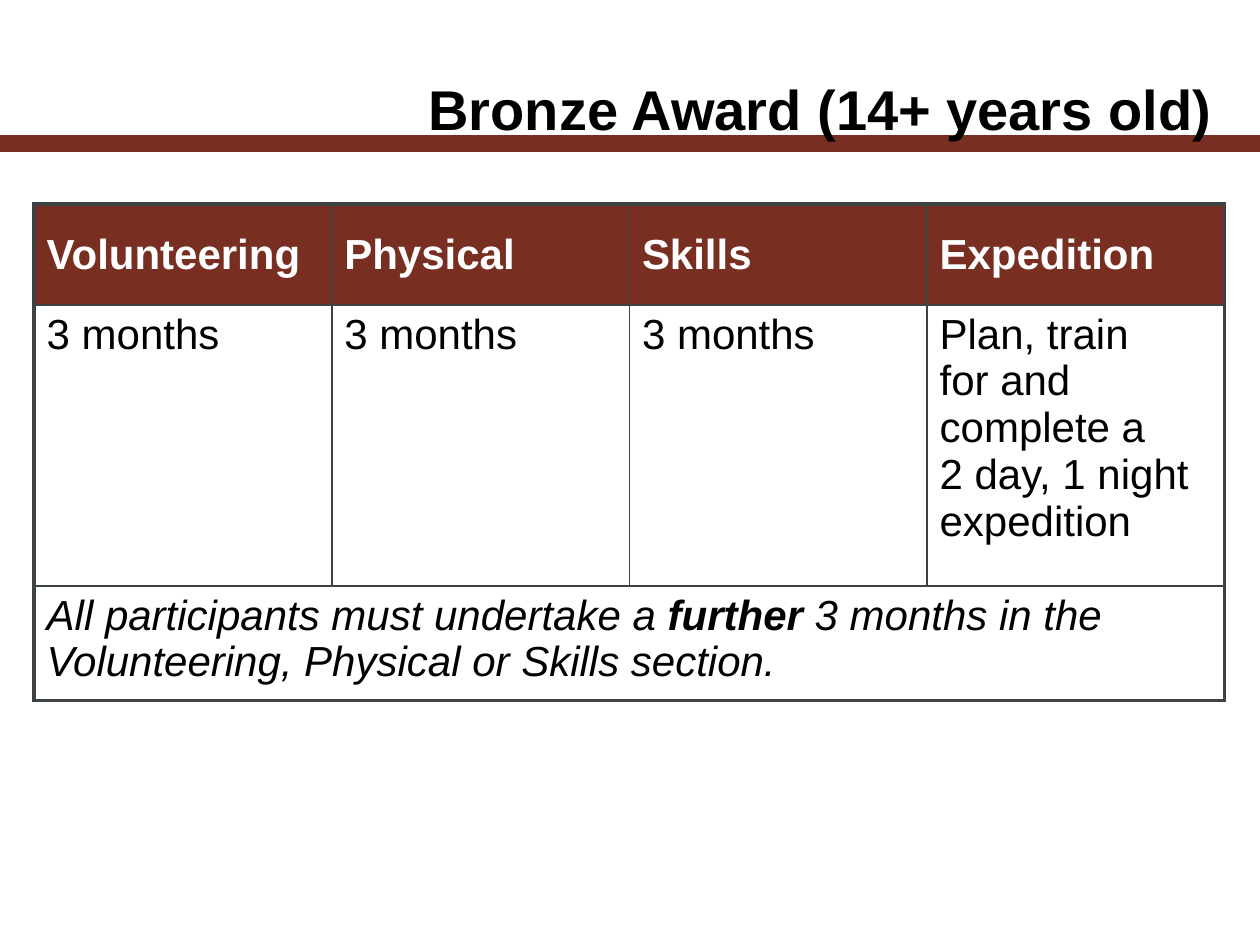
from dataclasses import dataclass
from typing import Any

import pptx
import pptx.dml.color
import pptx.enum.shapes
import pptx.enum.text
import pptx.oxml
import pptx.oxml.ns
import pptx.util

Pt = pptx.util.Pt
RGBColor = pptx.dml.color.RGBColor
MSO_ANCHOR = pptx.enum.text.MSO_ANCHOR
PP_ALIGN = pptx.enum.text.PP_ALIGN

RUST = RGBColor(0x78, 0x2F, 0x21)
GREY = RGBColor(0x3D, 0x42, 0x42)
BLACK = RGBColor(0, 0, 0)
WHITE = RGBColor(255, 255, 255)

FONT = "Arial"
COLUMN_WIDTH = 170.1
OUTER = 2.25
INNER = 1


@dataclass(frozen=True)
class Row:
    height: float
    texts: tuple[str, ...]
    fill: RGBColor = WHITE
    color: RGBColor = BLACK
    bold: bool = False
    italic: bool = False
    anchor: Any = MSO_ANCHOR.TOP


ROWS = (
    Row(57.6, ("Volunteering", "Physical", "Skills", "Expedition"),
        fill=RUST, color=WHITE, bold=True, anchor=MSO_ANCHOR.MIDDLE),
    Row(160.6, ("3 months", "3 months", "3 months",
                "Plan, train \nfor and complete a \n2 day, 1 night expedition")),
    Row(65.5, ("All participants must undertake a **further **"
               "3 months in the Volunteering, Physical or Skills section.",),
        italic=True),
)


def write_text(tf: Any, text: str, *, size: float = 24, color: RGBColor = BLACK,
               bold: bool = False, italic: bool = False,
               align: Any = PP_ALIGN.LEFT) -> None:
    p = tf.paragraphs[0]
    p.alignment = align
    p.space_before = Pt(0)
    for i, part in enumerate(text.split("**")):
        for j, line in enumerate(part.split("\n")):
            if j:
                p.add_line_break()
            r = p.add_run()
            r.text = line
            r.font.name = FONT
            r.font.size = Pt(size)
            r.font.color.rgb = color
            r.font.bold = bold or i % 2 == 1
            r.font.italic = italic


def set_border(cell: Any, side: str, width: float) -> None:
    tcPr = cell._tc.get_or_add_tcPr()
    tcPr.append(pptx.oxml.parse_xml(
        f'<a:ln{side} {pptx.oxml.ns.nsdecls("a")} w="{Pt(width)}">'
        f'<a:solidFill><a:srgbClr val="{GREY}"/></a:solidFill></a:ln{side}>'))


def format_cell(cell: Any, row: Row, i: int, j: int, columns: int) -> None:
    last = j == columns - 1
    merged = cell.is_merge_origin or cell.is_spanned
    if j == 0 or not merged:
        set_border(cell, "L", OUTER if j == 0 else INNER)
    if last or cell.is_merge_origin or not merged:
        set_border(cell, "R", OUTER if last or cell.is_merge_origin else INNER)
    set_border(cell, "T", OUTER if i == 0 else INNER)
    set_border(cell, "B", OUTER if i == len(ROWS) - 1 else INNER)
    cell.fill.solid()
    cell.fill.fore_color.rgb = row.fill
    cell.vertical_anchor = row.anchor


def add_award_table(s: Any, left: float, top: float) -> None:
    columns = len(ROWS[0].texts)
    height = sum(row.height for row in ROWS)
    table = s.shapes.add_table(len(ROWS), columns, Pt(left), Pt(top),
                               Pt(COLUMN_WIDTH * columns), Pt(height)).table
    table.first_row = False
    table.horz_banding = False
    for column in table.columns:
        column.width = Pt(COLUMN_WIDTH)
    for i, row in enumerate(ROWS):
        table.rows[i].height = Pt(row.height)
        if len(row.texts) == 1:
            table.cell(i, 0).merge(table.cell(i, columns - 1))
        for j in range(columns):
            format_cell(table.cell(i, j), row, i, j, columns)
        for j, text in enumerate(row.texts):
            write_text(table.cell(i, j).text_frame, text, color=row.color,
                       bold=row.bold, italic=row.italic)


def add_rule(s: Any, y: float, width: float) -> None:
    sp = s.shapes.add_connector(pptx.enum.shapes.MSO_CONNECTOR.STRAIGHT,
                                Pt(0), Pt(y), Pt(720), Pt(y))
    sp.line.color.rgb = RUST
    sp.line.width = Pt(width)
    sp._element.spPr.append(
        pptx.oxml.parse_xml(f'<a:effectLst {pptx.oxml.ns.nsdecls("a")}/>'))
    s.shapes._spTree.insert(2, sp._element)


def add_title(s: Any, text: str) -> None:
    sp = s.shapes.title
    sp.left, sp.top, sp.width, sp.height = Pt(19.5), Pt(0), Pt(680.4), Pt(82.8)
    tf = sp.text_frame
    tf.word_wrap = True
    tf.auto_size = pptx.enum.text.MSO_AUTO_SIZE.NONE
    tf.vertical_anchor = MSO_ANCHOR.BOTTOM
    tf.margin_bottom = Pt(2)
    write_text(tf, text, size=32, bold=True, align=PP_ALIGN.RIGHT)


def main() -> None:
    prs = pptx.Presentation()
    prs.slide_width, prs.slide_height = Pt(720), Pt(540)
    s = prs.slides.add_slide(prs.slide_layouts[5])
    s.background.fill.solid()
    s.background.fill.fore_color.rgb = WHITE
    add_rule(s, 82, 10)
    add_title(s, "Bronze Award (14+ years old)")
    add_award_table(s, 19.5, 116.6)
    prs.save("out.pptx")


if __name__ == "__main__":
    main()
